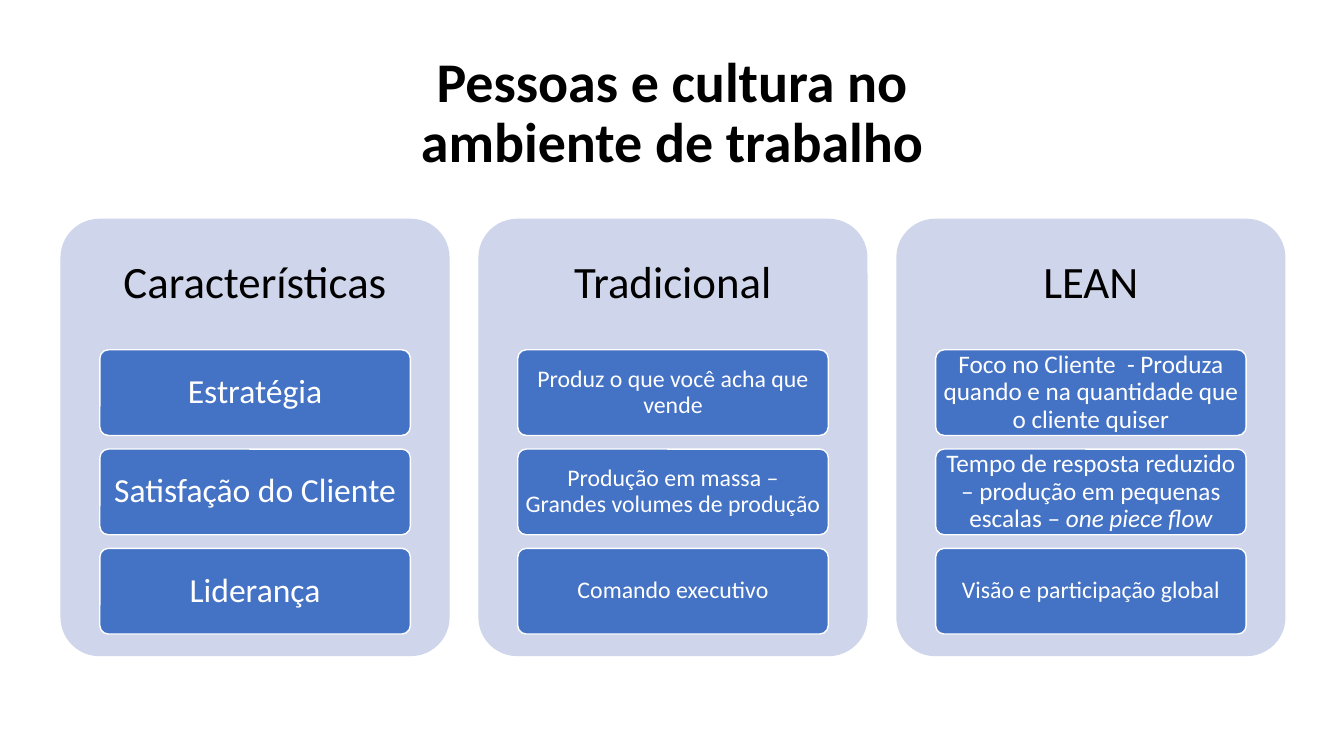
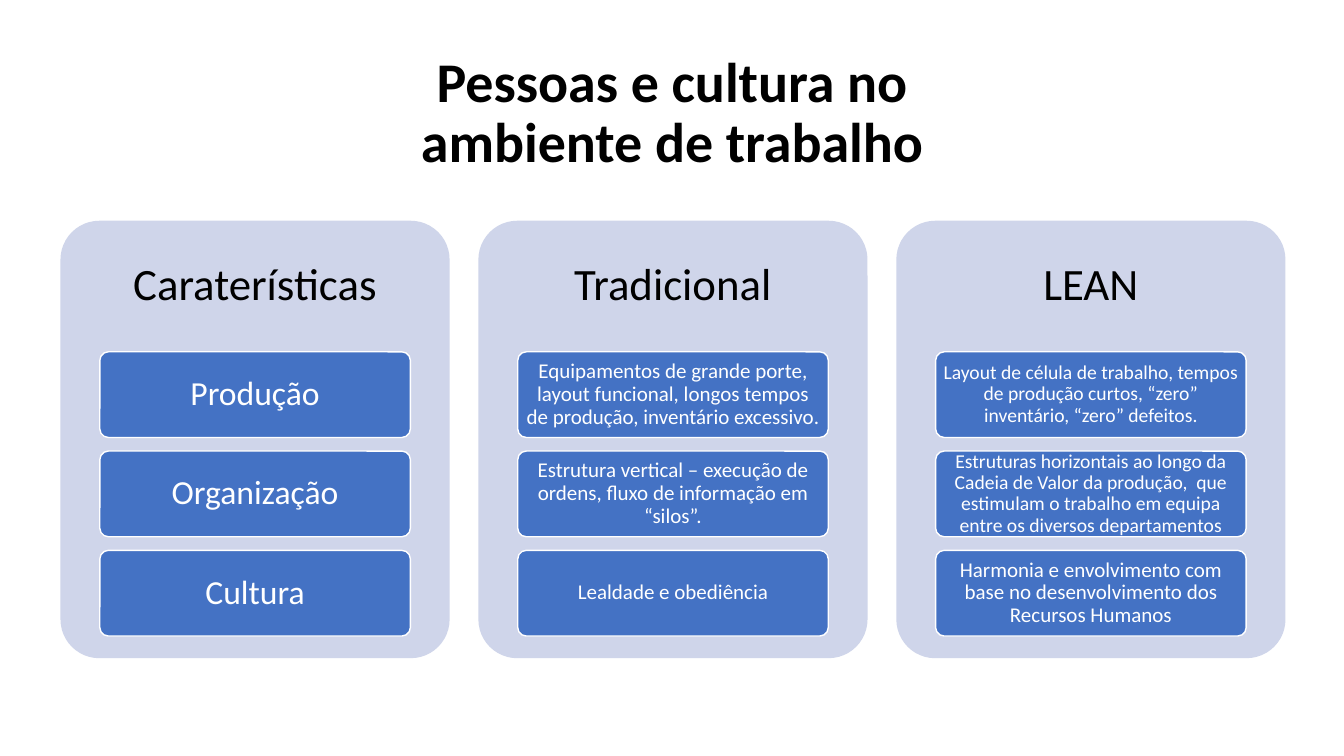
from dataclasses import dataclass

from pptx import Presentation
from pptx.dml.color import RGBColor
from pptx.enum import shapes, text
from pptx.util import Inches, Pt


@dataclass(frozen=True)
class Theme:
    font: str = "Calibri"
    ink: str = "000000"
    paper: str = "FFFFFF"
    panel: str = "CFD5EA"
    card: str = "4472C4"
    title_size: int = 40
    heading_size: int = 32
    label_size: int = 24
    line_spacing: float = 0.9
    corner: float = 0.1


THEME = Theme()
SLIDE_W, SLIDE_H = 13.33, 7.5
TITLE = ["Pessoas e cultura no", "ambiente de trabalho"]

# Panels run between the two margins; cards fill the lower part of each panel.
PANEL_LEFT, PANEL_RIGHT = 0.6, 12.75
PANEL_W, PANEL_H = 3.86, 4.34
CARD_W, CARD_H = 3.08, 0.85
CARDS_TOP, CARDS_H = 1.3, 2.82
HEADING_BOTTOM_INSET = 3.04

# Per slide: top of the panels, then columns of (heading, cards).
# A card is (size, text) or (size, text, closing words in italics).
SLIDES = [
    (2.17, [
        ("Características", [
            (THEME.label_size, "Estratégia"),
            (THEME.label_size, "Satisfação do Cliente"),
            (THEME.label_size, "Liderança"),
        ]),
        ("Tradicional", [
            (17, "Produz o que você acha que vende"),
            (17, "Produção em massa – Grandes volumes de produção"),
            (17, "Comando executivo"),
        ]),
        ("LEAN", [
            (18, "Foco no Cliente  - Produza quando e na quantidade que "
                 "o cliente quiser"),
            (18, "Tempo de resposta reduzido – produção em pequenas "
                 "escalas – ", "one piece flow"),
            (17, "Visão e participação global"),
        ]),
    ]),
    (2.19, [
        ("Caraterísticas", [
            (THEME.label_size, "Produção"),
            (THEME.label_size, "Organização"),
            (THEME.label_size, "Cultura"),
        ]),
        ("Tradicional", [
            (15, "Equipamentos de grande porte, layout funcional, longos "
                 "tempos de produção, inventário excessivo."),
            (15, "Estrutura vertical – execução de ordens, fluxo de "
                 "informação em “silos”."),
            (15, "Lealdade e obediência"),
        ]),
        ("LEAN", [
            (14, "Layout de célula de trabalho, tempos de produção curtos, "
                 "“zero” inventário, “zero” defeitos."),
            (14, "Estruturas horizontais ao longo da Cadeia de Valor da "
                 "produção,  que estimulam o trabalho em equipa entre os "
                 "diversos departamentos"),
            (15, "Harmonia e envolvimento com base no desenvolvimento dos "
                 "Recursos Humanos"),
        ]),
    ]),
]


def rgb(value):
    return RGBColor.from_string(value)


def write(p, content, size, color, bold=False, italic=False):
    """Append one formatted run to a centred paragraph."""
    p.alignment = text.PP_ALIGN.CENTER
    p.line_spacing = THEME.line_spacing
    r = p.add_run()
    r.text = content
    r.font.name = THEME.font
    r.font.size = Pt(size)
    r.font.color.rgb = rgb(color)
    r.font.bold = bold
    r.font.italic = italic


def set_frame(tf, left, top, right, bottom):
    """Wrap and centre the text vertically inside the given insets."""
    tf.word_wrap = True
    tf.auto_size = text.MSO_AUTO_SIZE.NONE
    tf.vertical_anchor = text.MSO_ANCHOR.MIDDLE
    tf.margin_left, tf.margin_top = Inches(left), Inches(top)
    tf.margin_right, tf.margin_bottom = Inches(right), Inches(bottom)


def add_rounded(slide, x, y, w, h, fill, line=None):
    sp = slide.shapes.add_shape(shapes.MSO_SHAPE.ROUNDED_RECTANGLE,
                                Inches(x), Inches(y), Inches(w), Inches(h))
    sp.adjustments[0] = THEME.corner
    sp.shadow.inherit = False
    sp.fill.solid()
    sp.fill.fore_color.rgb = rgb(fill)
    if line:
        sp.line.color.rgb = rgb(line)
        sp.line.width = Pt(1)
    else:
        sp.line.fill.background()
    return sp


def add_title(slide):
    sp = slide.shapes.title
    sp.left, sp.top = Inches(0), Inches(0.48)
    sp.width, sp.height = Inches(SLIDE_W), Inches(1.31)
    tf = sp.text_frame
    set_frame(tf, 0.1, 0.05, 0.1, 0.05)
    for i, line in enumerate(TITLE):
        p = tf.add_paragraph() if i else tf.paragraphs[0]
        p.space_before = Pt(0)
        write(p, line, THEME.title_size, THEME.ink, bold=True)


def add_card(slide, x, y, size, content, closing=""):
    sp = add_rounded(slide, x, y, CARD_W, CARD_H, THEME.card, THEME.paper)
    tf = sp.text_frame
    side, edge = size / 360, size / 480
    set_frame(tf, side, edge, side, edge)
    p = tf.paragraphs[0]
    write(p, content, size, THEME.paper)
    if closing:
        write(p, closing, size, THEME.paper, italic=True)


def add_column(slide, x, y, heading, cards):
    """Draw a panel with its heading and an evenly spaced stack of cards."""
    sp = add_rounded(slide, x, y, PANEL_W, PANEL_H, THEME.panel)
    set_frame(sp.text_frame, 0, 0, 0, HEADING_BOTTOM_INSET)
    write(sp.text_frame.paragraphs[0], heading, THEME.heading_size, THEME.ink)
    step = (CARDS_H - CARD_H) / (len(cards) - 1)
    for i, card in enumerate(cards):
        add_card(slide, x + (PANEL_W - CARD_W) / 2,
                 y + CARDS_TOP + i * step, *card)


def main():
    prs = Presentation()
    prs.slide_width, prs.slide_height = Inches(SLIDE_W), Inches(SLIDE_H)
    title_only = prs.slide_layouts.get_by_name("Title Only")
    for top, columns in SLIDES:
        slide = prs.slides.add_slide(title_only)
        add_title(slide)
        step = (PANEL_RIGHT - PANEL_LEFT - PANEL_W) / (len(columns) - 1)
        for i, (heading, cards) in enumerate(columns):
            add_column(slide, PANEL_LEFT + i * step, top, heading, cards)
    prs.save("out.pptx")


if __name__ == "__main__":
    main()
